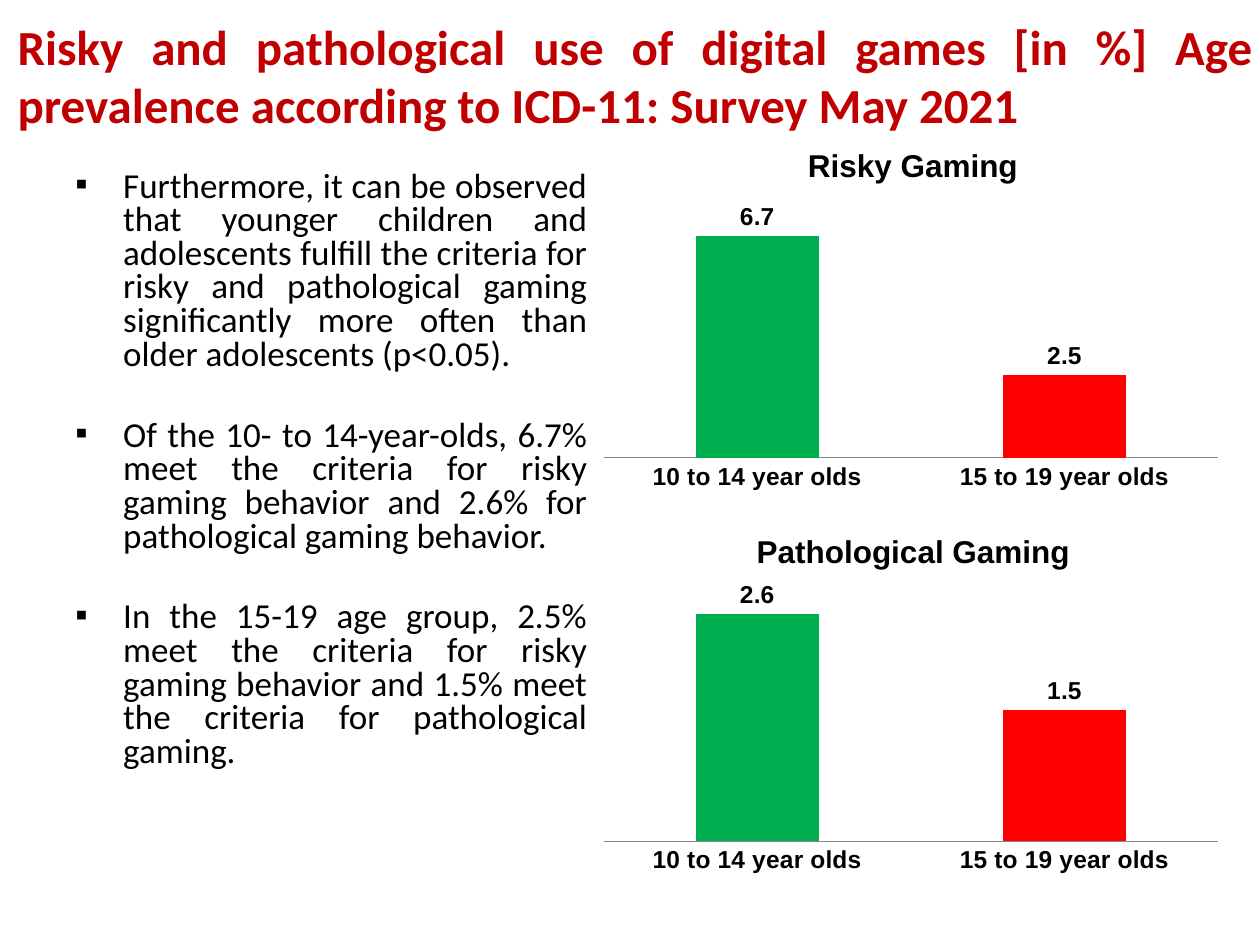
from dataclasses import dataclass

from lxml import etree
from pptx import Presentation
from pptx import util as u
from pptx.chart import data as chart_data
from pptx.dml.color import RGBColor
from pptx.enum import chart as ch
from pptx.enum import text
from pptx.oxml.ns import qn


@dataclass(frozen=True)
class Theme:
    text_font: str = "Calibri"
    chart_font: str = "Arial"
    heading: str = "C00000"
    ink: str = "000000"
    axis: str = "878787"
    younger: str = "00B050"
    older: str = "FF0000"
    title_size: int = 28
    body_size: int = 20
    chart_title_size: int = 18
    label_size: int = 14


class SlideBuilder:
    def __init__(self, slide, theme):
        self.slide = slide
        self.theme = theme

    def style(self, font, name, size, color, bold=False):
        font.name = name
        font.size = u.Pt(size)
        font.bold = bold
        font.color.rgb = RGBColor.from_string(color)

    def add_run(self, paragraph, wording, *look, **options):
        run = paragraph.add_run()
        run.text = wording
        self.style(run.font, *look, **options)

    def place(self, parent, **fractions):
        """Fix a chart part at fractions of the chart's size."""
        layout = parent.find(qn("c:layout"))
        if layout is None:
            layout = etree.Element(qn("c:layout"))
            parent.insert(0, layout)
        manual = etree.SubElement(layout, qn("c:manualLayout"))
        if "w" in fractions:
            etree.SubElement(manual, qn("c:layoutTarget"), val="inner")
        for side in ("x", "y"):
            etree.SubElement(manual, qn(f"c:{side}Mode"), val="edge")
        for side, value in fractions.items():
            etree.SubElement(manual, qn(f"c:{side}"), val=str(value))

    def title(self, wording, left, top, width, height):
        heading = self.slide.shapes.title
        heading.left, heading.top = u.Inches(left), u.Inches(top)
        heading.width, heading.height = u.Inches(width), u.Inches(height)
        frame = heading.text_frame
        frame.word_wrap = True
        frame.auto_size = text.MSO_AUTO_SIZE.NONE
        frame.vertical_anchor = text.MSO_ANCHOR.MIDDLE
        paragraph = frame.paragraphs[0]
        paragraph.alignment = text.PP_ALIGN.JUSTIFY
        self.add_run(paragraph, wording, self.theme.text_font,
                     self.theme.title_size, self.theme.heading, bold=True)

    def bullets(self, findings, left, top, width, height):
        box = self.slide.shapes.add_textbox(
            u.Inches(left), u.Inches(top), u.Inches(width), u.Inches(height))
        frame = box.text_frame
        frame.word_wrap = True
        for index, finding in enumerate(findings):
            paragraph = frame.add_paragraph() if index else frame.paragraphs[0]
            paragraph.alignment = text.PP_ALIGN.JUSTIFY
            paragraph.line_spacing = 0.8
            paragraph.space_before = u.Pt(27 if index else 0)
            props = paragraph._p.get_or_add_pPr()
            props.set("marL", str(u.Inches(0.38)))
            props.set("indent", str(u.Inches(-0.38)))
            bullet_color = etree.SubElement(props, qn("a:buClr"))
            etree.SubElement(bullet_color, qn("a:srgbClr"), val=self.theme.ink)
            etree.SubElement(props, qn("a:buFont"), typeface=self.theme.chart_font)
            etree.SubElement(props, qn("a:buChar"), char="▪")
            self.add_run(paragraph, finding, self.theme.text_font,
                         self.theme.body_size, self.theme.ink)

    def column_chart(self, heading, heading_x, ages, shares, axis_max, overlap,
                     left, top, width, height):
        theme = self.theme
        label_look = (theme.chart_font, theme.label_size, theme.ink, True)
        prevalence = chart_data.CategoryChartData()
        prevalence.categories = ages
        prevalence.add_series("Series 1", shares)
        chart = self.slide.shapes.add_chart(
            ch.XL_CHART_TYPE.COLUMN_CLUSTERED, u.Inches(left), u.Inches(top),
            u.Inches(width), u.Inches(height), prevalence).chart
        self.style(chart.font, theme.chart_font, 10, theme.ink)
        chart.has_legend = False

        # Chart title and plot area
        chart.has_title = True
        self.add_run(chart.chart_title.text_frame.paragraphs[0], heading,
                     theme.chart_font, theme.chart_title_size, theme.ink, bold=True)
        self.place(chart.chart_title._element, x=heading_x, y=0.06)
        self.place(chart._chartSpace.chart.plotArea, x=0.02, y=0.2, w=0.96, h=0.69)

        # Axes
        age_axis, share_axis = chart.category_axis, chart.value_axis
        age_axis.major_tick_mark = ch.XL_TICK_MARK.NONE
        age_axis.format.line.color.rgb = RGBColor.from_string(theme.axis)
        self.style(age_axis.tick_labels.font, *label_look)
        share_axis.minimum_scale, share_axis.maximum_scale = 0, axis_max
        share_axis.has_major_gridlines = False
        share_axis.visible = False

        # Columns and value labels
        plot = chart.plots[0]
        plot.gap_width, plot.overlap = 150, overlap
        plot.vary_by_categories = False
        series = plot.series[0]
        series.invert_if_negative = False
        for fill, color in ((series.format.fill, theme.younger),
                            (series.points[1].format.fill, theme.older)):
            fill.solid()
            fill.fore_color.rgb = RGBColor.from_string(color)
        labels = series.data_labels
        labels.show_value = True
        labels.position = ch.XL_LABEL_POSITION.OUTSIDE_END
        self.style(labels.font, *label_look)


def main():
    deck = Presentation()
    deck.slide_width, deck.slide_height = u.Inches(10), u.Inches(7.5)
    title_only = deck.slide_layouts[5]
    page = SlideBuilder(deck.slides.add_slide(title_only), Theme())

    page.title("Risky and pathological use of digital games [in %] Age prevalence "
               "according to ICD-11: Survey May 2021", 0.04, -0.03, 10, 1.25)

    # Findings on the left
    page.bullets([
        "Furthermore, it can be observed that younger children and adolescents "
        "fulfill the criteria for risky and pathological gaming significantly "
        "more often than older adolescents (p<0.05).",
        "Of the 10- to 14-year-olds, 6.7% meet the criteria for risky gaming "
        "behavior and 2.6% for pathological gaming behavior.",
        "In the 15-19 age group, 2.5% meet the criteria for risky gaming behavior "
        "and 1.5% meet the criteria for pathological gaming.",
    ], 0.5, 1.31, 4.26, 5)

    # Prevalence charts on the right
    ages = ["10 to 14 year olds", "15 to 19 year olds"]
    page.column_chart("Risky Gaming", 0.33, ages, (6.7, 2.5), 8, 25,
                      4.69, 0.92, 5.08, 3.05)
    page.column_chart("Pathological Gaming", 0.25, ages, (2.6, 1.5), 3, -25,
                      4.69, 3.99, 5.08, 3.02)

    deck.save("out.pptx")


if __name__ == "__main__":
    main()
